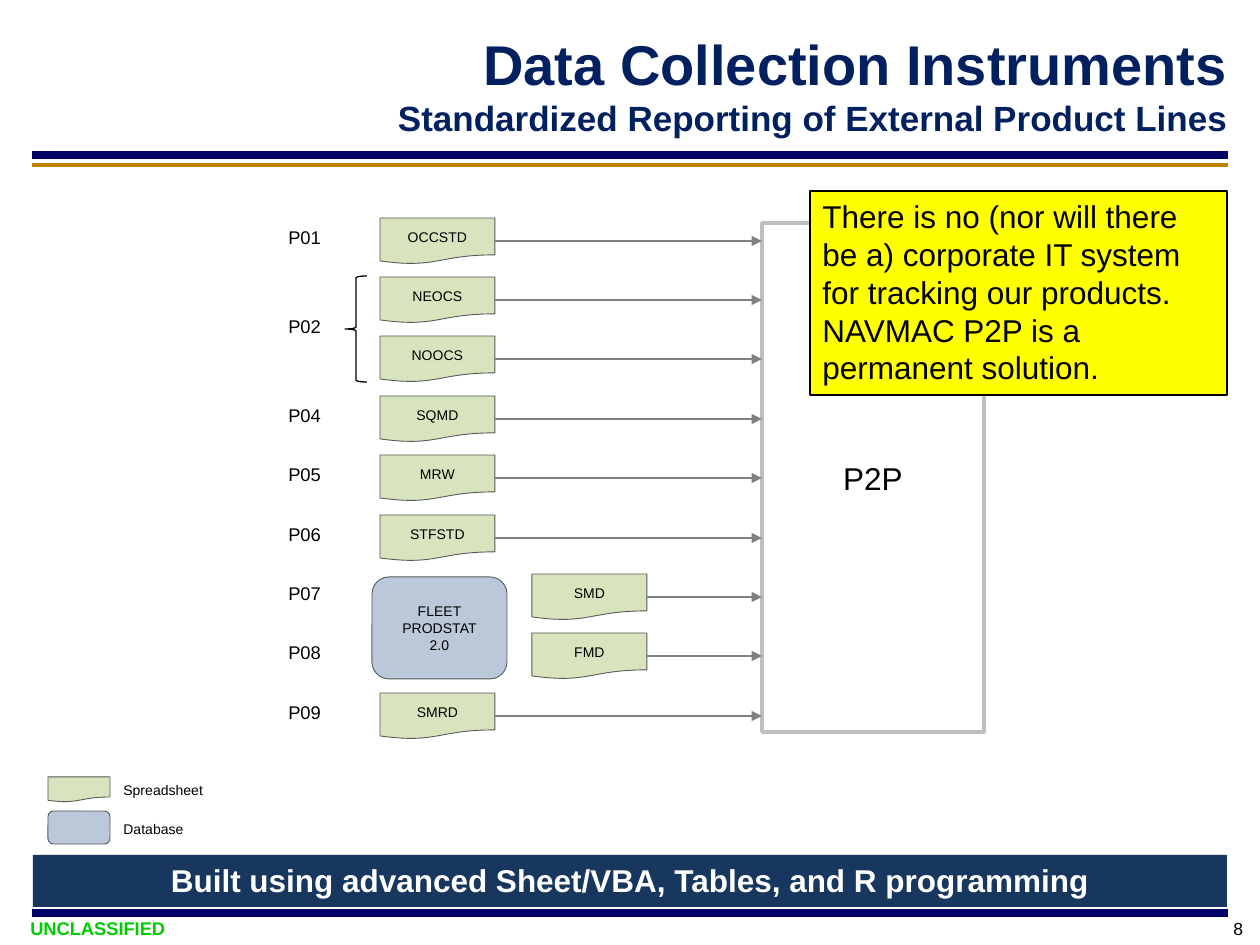
from dataclasses import dataclass

from lxml import etree
from pptx import Presentation
from pptx.dml.color import RGBColor
from pptx.enum.shapes import MSO_CONNECTOR, MSO_SHAPE
from pptx.enum.text import MSO_ANCHOR, PP_ALIGN
from pptx.oxml.ns import qn
from pptx.util import Emu, Pt

PX = 7257.6  # EMU per px, 126 px to the inch
LEFT, CENTER, RIGHT = PP_ALIGN.LEFT, PP_ALIGN.CENTER, PP_ALIGN.RIGHT
TOP, MIDDLE = MSO_ANCHOR.TOP, MSO_ANCHOR.MIDDLE
DOCUMENT, ROUNDED = MSO_SHAPE.FLOWCHART_DOCUMENT, MSO_SHAPE.ROUNDED_RECTANGLE
RECTANGLE, BRACE = MSO_SHAPE.RECTANGLE, MSO_SHAPE.LEFT_BRACE
STRAIGHT = MSO_CONNECTOR.STRAIGHT
RIGHT_SIDE = 3


@dataclass(frozen=True)
class Theme:
    font: str = "Arial"
    black: str = "000000"
    white: str = "FFFFFF"
    title: str = "002060"
    rule: str = "000066"
    gold: str = "B98200"
    sheet: str = "D7E4BD"
    database: str = "376092"
    outline: str = "595959"
    arrow: str = "808080"
    system: str = "BFBFBF"
    banner: str = "17375E"
    note: str = "FFFF00"
    marking: str = "00CC00"
    title_size: float = 32
    subtitle_size: float = 20
    large: float = 18
    label: float = 10.5
    number: float = 10
    small: float = 8


THEME = Theme()
FIRST_TOP, PITCH = 217.6, 59.4
SHEET_SIZE = (115, 46)
SHEET_X, FLEET_SHEET_X, SYSTEM_X = 380, 532, 762
SHEETS = ["OCCSTD", "NEOCS", "NOOCS", "SQMD", "MRW", "STFSTD", "SMD", "FMD", "SMRD"]
FLEET_SHEETS = {"SMD", "FMD"}
# Product line and its row; P02 sits between two rows
PRODUCT_LINES = [("P01", 0), ("P02", 1.5), ("P04", 3), ("P05", 4),
                 ("P06", 5), ("P07", 6), ("P08", 7), ("P09", 8)]


def px(value):
    return Emu(round(value * PX))


def row_top(row):
    return round(FIRST_TOP + PITCH * row)


def color(value):
    return RGBColor.from_string(value)


def set_font(font, size, fill, bold=False):
    font.name, font.size, font.bold = THEME.font, Pt(size), bold
    font.color.rgb = color(fill)


def write(box, text, size, fill=THEME.black, bold=False, align=LEFT, anchor=TOP):
    frame = box.text_frame
    frame.word_wrap = True
    frame.vertical_anchor = anchor
    para = frame.paragraphs[0]
    para.text = text
    para.alignment = align
    set_font(para.font, size, fill, bold)
    return frame


def add_text(page, bounds, text, size, **style):
    box = page.shapes.add_textbox(*map(px, bounds))
    return write(box, text, size, **style)


def add_block(page, kind, bounds, fill=None, line=None, width=0.5, alpha=None):
    block = page.shapes.add_shape(kind, *map(px, bounds))
    block.shadow.inherit = False
    if fill:
        block.fill.solid()
        block.fill.fore_color.rgb = color(fill)
        if alpha:
            solid = block.fill._xPr.find(qn("a:solidFill"))
            etree.SubElement(solid[0], qn("a:alpha"), val=str(alpha * 1000))
    else:
        block.fill.background()
    if line:
        block.line.color.rgb = color(line)
        block.line.width = Pt(width)
    else:
        block.line.fill.background()
    return block


def add_sheet(page, bounds):
    return add_block(page, DOCUMENT, bounds, THEME.sheet, THEME.outline)


def add_database(page, bounds):
    return add_block(page, ROUNDED, bounds, THEME.database, THEME.outline, alpha=34)


def add_line(page, start, end, stroke, width):
    line = page.shapes.add_connector(STRAIGHT, *map(px, start + end))
    line.line.color.rgb = color(stroke)
    line.line.width = Pt(width)
    etree.SubElement(line._element.spPr, qn("a:effectLst"))
    return line


def add_arrow(page, sheet, start, end):
    arrow = add_line(page, start, end, THEME.arrow, 0.75)
    arrow.begin_connect(sheet, RIGHT_SIDE)
    etree.SubElement(arrow.line._get_or_add_ln(), qn("a:tailEnd"), type="triangle")


def add_title(page):
    frame = add_text(page, (89, 5, 1139, 158), "Data Collection Instruments",
                     THEME.title_size, fill=THEME.title, bold=True,
                     align=RIGHT, anchor=MIDDLE)
    frame.margin_right = 0
    para = frame.paragraphs[0]
    para.add_line_break()
    span = para.add_run()
    span.text = "Standardized Reporting of External Product Lines"
    span.font.size = Pt(THEME.subtitle_size)


def add_frame(page):
    for y, stroke, width in [(155, THEME.rule, 4.5), (165, THEME.gold, 2.75),
                             (913, THEME.rule, 4.5)]:
        add_line(page, (32, y), (1228, y), stroke, width)
    marking = add_text(page, (18, 912, 163, 34), "UNCLASSIFIED", THEME.label,
                       fill=THEME.marking, bold=True, anchor=MIDDLE)
    marking.word_wrap = False
    marking.paragraphs[0].line_spacing = Pt(12)
    number = add_text(page, (1169, 912, 74, 33), "8", THEME.number, align=RIGHT)
    number.margin_right = 0


def add_flow(page):
    # Product line labels
    for name, row in PRODUCT_LINES:
        add_text(page, (276, row_top(row) + 2, 77, 35), name, THEME.label)
    add_block(page, BRACE, (345, 276, 22, 106), line=THEME.black, width=0.75)

    # Fleet database
    fleet = add_database(page, (372, 577, 135, 102))
    frame = write(fleet, "FLEET PRODSTAT 2.0", THEME.small, align=CENTER, anchor=MIDDLE)
    frame.margin_left = frame.margin_right = px(20)

    # Receiving system
    system = add_block(page, RECTANGLE, (SYSTEM_X, 223, 222, 509),
                       line=THEME.system, width=2)
    write(system, "P2P", THEME.large, align=CENTER, anchor=MIDDLE)

    # Spreadsheets feeding the system
    width, height = SHEET_SIZE
    for row, name in enumerate(SHEETS):
        left = FLEET_SHEET_X if name in FLEET_SHEETS else SHEET_X
        top = row_top(row)
        sheet = add_sheet(page, (left, top, width, height))
        write(sheet, name, THEME.small, align=CENTER, anchor=MIDDLE)
        middle = top + height // 2
        add_arrow(page, sheet, (left + width, middle), (SYSTEM_X, middle))


def add_legend(page):
    add_sheet(page, (48, 777, 62, 25))
    add_database(page, (48, 811, 62, 33))
    for top, name in [(775, "Spreadsheet"), (814, "Database")]:
        add_text(page, (111, top, 161, 30), name, THEME.small)


def add_callouts(page):
    banner = add_block(page, RECTANGLE, (33, 855, 1194, 52), THEME.banner)
    write(banner, "Built using advanced Sheet/VBA, Tables, and R programming",
          THEME.large, fill=THEME.white, bold=True, align=CENTER)
    note = add_block(page, RECTANGLE, (810, 191, 417, 204), THEME.note,
                     THEME.black, 0.75)
    write(note, "There is no (nor will there be a) corporate IT system for tracking "
          "our products. NAVMAC P2P is a permanent solution.", THEME.large)


def main():
    deck = Presentation()
    deck.slide_width, deck.slide_height = px(1260), px(945)
    page = deck.slides.add_slide(deck.slide_layouts[6])
    add_frame(page)
    add_title(page)
    add_flow(page)
    add_legend(page)
    add_callouts(page)
    deck.save("out.pptx")


if __name__ == "__main__":
    main()
